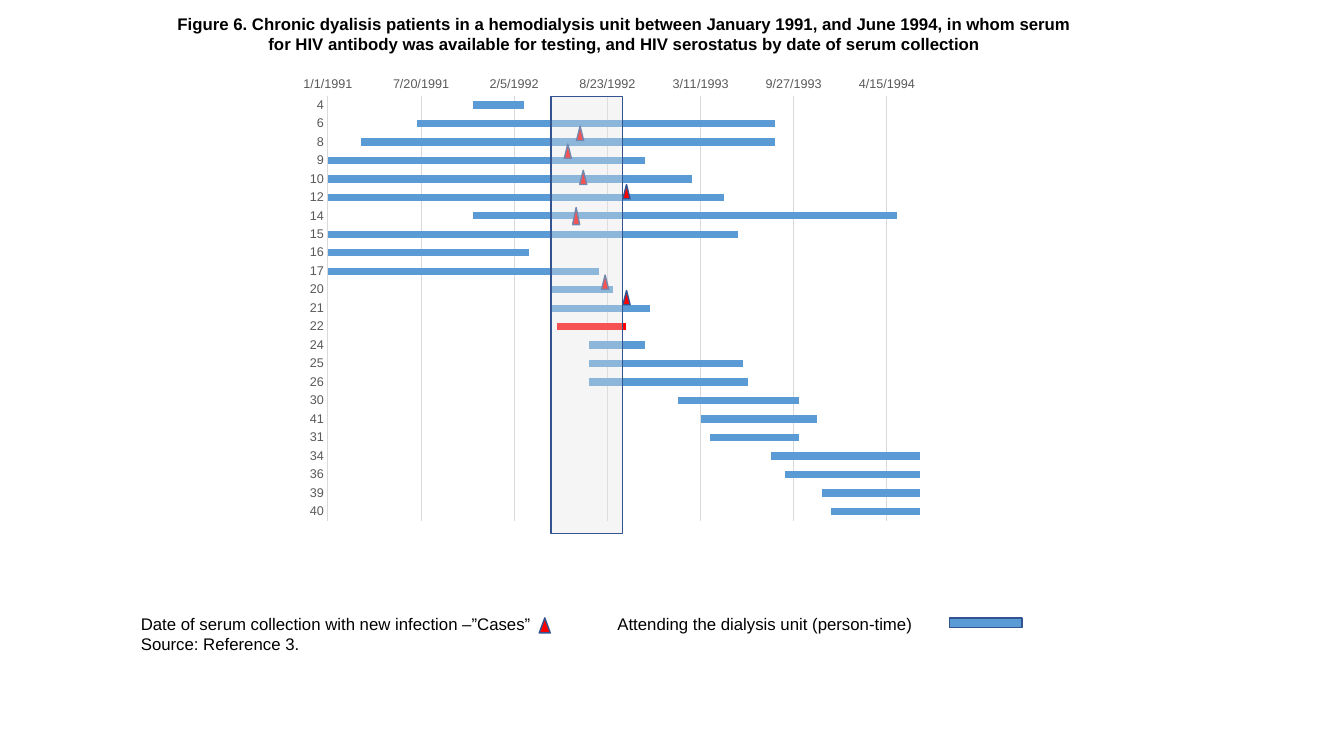
import lxml.etree
import pptx
import pptx.chart.data
import pptx.dml.color
import pptx.enum.chart
import pptx.enum.shapes
import pptx.enum.text
import pptx.oxml.ns
import pptx.util

Cm = pptx.util.Cm
Pt = pptx.util.Pt
qn = pptx.oxml.ns.qn
SHAPE = pptx.enum.shapes.MSO_SHAPE
BLUE, RED, NAVY, GRID, BLACK = "5B9BD5", "FF0000", "325491", "D9D9D9", "000000"

ATTENDANCE = [
    ("4", 33550, 110), ("6", 33430, 770), ("8", 33310, 890),
    ("9", 33240, 680), ("10", 33240, 780), ("12", 33240, 850),
    ("14", 33550, 910), ("15", 33240, 880), ("16", 33240, 430),
    ("17", 33240, 580), ("20", 33720, 130), ("21", 33720, 210),
    ("22", 33730, 150), ("24", 33800, 120), ("25", 33800, 330),
    ("26", 33800, 340), ("30", 33990, 260), ("41", 34040, 250),
    ("31", 34060, 190), ("34", 34190, 320), ("36", 34220, 290),
    ("39", 34300, 210), ("40", 34320, 190),
]
RED_PATIENT = "22"
CASES = [
    (14.53, 3.18, 0.18, 0.36), (14.22, 3.63, 0.18, 0.36),
    (14.61, 4.29, 0.18, 0.36), (15.7, 4.65, 0.18, 0.36),
    (14.43, 5.23, 0.18, 0.43), (15.16, 6.93, 0.18, 0.36),
    (15.7, 7.32, 0.18, 0.36), (13.59, 15.57, 0.28, 0.38),
]
TITLE = (
    "Figure 6. Chronic dyalisis patients in a hemodialysis unit between "
    "January 1991, and June 1994, in whom serum for HIV antibody was available "
    "for testing, and HIV serostatus by date of serum collection"
)
LEGEND = [
    "Date of serum collection with new infection –”Cases”\t"
    "Attending the dialysis unit (person-time)",
    "Source: Reference 3.",
]


def color(value):
    return pptx.dml.color.RGBColor.from_string(value)


def apply(target, values):
    for name, value in values.items():
        setattr(target, name, value)


def set_fill(fill, value):
    fill.solid()
    fill.fore_color.rgb = color(value)


def set_line(line, value, width):
    set_fill(line.fill, value)
    line.width = Pt(width)


def set_font(font, size, value, bold=False, name="Arial"):
    apply(font, {"name": name, "size": Pt(size), "bold": bold})
    font.color.rgb = color(value)


def add_box(slide, kind, box, fill, opacity=100):
    shape = slide.shapes.add_shape(kind, *map(Cm, box))
    shape.shadow.inherit = False
    set_fill(shape.fill, fill)
    set_line(shape.line, NAVY, 1)
    if opacity < 100:
        fill_color = shape.element.spPr.find(qn("a:solidFill"))[0]
        lxml.etree.SubElement(fill_color, qn("a:alpha"), val=str(opacity * 1000))


def add_text(slide, box, lines, alignment, bold=False, tab=None):
    frame = slide.shapes.add_textbox(*map(Cm, box)).text_frame
    apply(frame, {
        "word_wrap": True,
        "auto_size": pptx.enum.text.MSO_AUTO_SIZE.SHAPE_TO_FIT_TEXT,
        "text": "\n".join(lines),
    })
    for paragraph in frame.paragraphs:
        paragraph.alignment = alignment
        set_font(paragraph.runs[0].font, 12, BLACK, bold)
        if tab:
            properties = paragraph._p.get_or_add_pPr()
            tabs = lxml.etree.SubElement(properties, qn("a:tabLst"))
            lxml.etree.SubElement(tabs, qn("a:tab"), pos=str(Cm(tab)), algn="l")


def set_plot_layout(chart, box):
    plot_area = chart.element.find(qn("c:chart")).find(qn("c:plotArea"))
    for layout in plot_area.findall(qn("c:layout")):
        plot_area.remove(layout)
    layout = lxml.etree.Element(qn("c:layout"))
    manual = lxml.etree.SubElement(layout, qn("c:manualLayout"))
    settings = {"layoutTarget": "inner", "xMode": "edge", "yMode": "edge"}
    settings.update(zip("xywh", map(str, box)))
    for name, value in settings.items():
        lxml.etree.SubElement(manual, qn("c:" + name), val=value)
    plot_area.insert(0, layout)


def style_axis(axis, values):
    none = pptx.enum.chart.XL_TICK_MARK.NONE
    apply(axis, {"major_tick_mark": none, "minor_tick_mark": none, **values})
    set_font(axis.tick_labels.font, 9, "595959")


def add_timeline(slide, box):
    patients, starts, durations = zip(*ATTENDANCE)
    data = pptx.chart.data.CategoryChartData()
    data.categories = patients
    data.add_series("Series 1", starts)
    data.add_series("Series 2", durations)
    kind = pptx.enum.chart.XL_CHART_TYPE.BAR_STACKED
    chart = slide.shapes.add_chart(kind, *map(Cm, box), data).chart
    apply(chart, {"has_legend": False, "has_title": False})
    set_font(chart.font, 10, BLACK, name="Calibri")
    set_plot_layout(chart, (0.074, 0.074, 0.871, 0.89))

    plot = chart.plots[0]
    apply(plot, {"gap_width": 150, "overlap": 100, "vary_by_categories": False})
    offset, attendance = plot.series
    offset.format.fill.background()
    set_fill(attendance.format.fill, BLUE)
    set_fill(attendance.points[patients.index(RED_PATIENT)].format.fill, RED)

    style_axis(chart.category_axis, {"reverse_order": True, "has_major_gridlines": False})
    set_line(chart.category_axis.format.line, GRID, 0.75)
    dates = chart.value_axis
    style_axis(dates, {
        "minimum_scale": 33239, "maximum_scale": 34515,
        "major_unit": 200, "has_major_gridlines": True,
    })
    apply(dates.tick_labels, {"number_format": "m/d/yyyy", "number_format_is_linked": False})
    dates.format.line.fill.background()
    set_line(dates.major_gridlines.format.line, GRID, 0.75)


def main():
    presentation = pptx.Presentation()
    apply(presentation, {"slide_width": Cm(33.87), "slide_height": Cm(19.05)})
    slide = presentation.slides.add_slide(presentation.slide_layouts[6])
    align = pptx.enum.text.PP_ALIGN

    add_timeline(slide, (6.99, 1.52, 17.2, 12.04))
    add_text(slide, (3.3, 15.34, 21.16, 1.27), LEGEND, align.LEFT, tab=12.01)
    for case in CASES:
        add_box(slide, SHAPE.ISOSCELES_TRIANGLE, case, RED)
    add_text(slide, (4.17, 0.23, 23.14, 1.27), [TITLE], align.CENTER, bold=True)
    add_box(slide, SHAPE.RECTANGLE, (13.89, 2.44, 1.8, 11), "E7E6E6", opacity=36)
    add_box(slide, SHAPE.RECTANGLE, (23.93, 15.57, 1.83, 0.25), BLUE)
    presentation.save("out.pptx")


if __name__ == "__main__":
    main()
